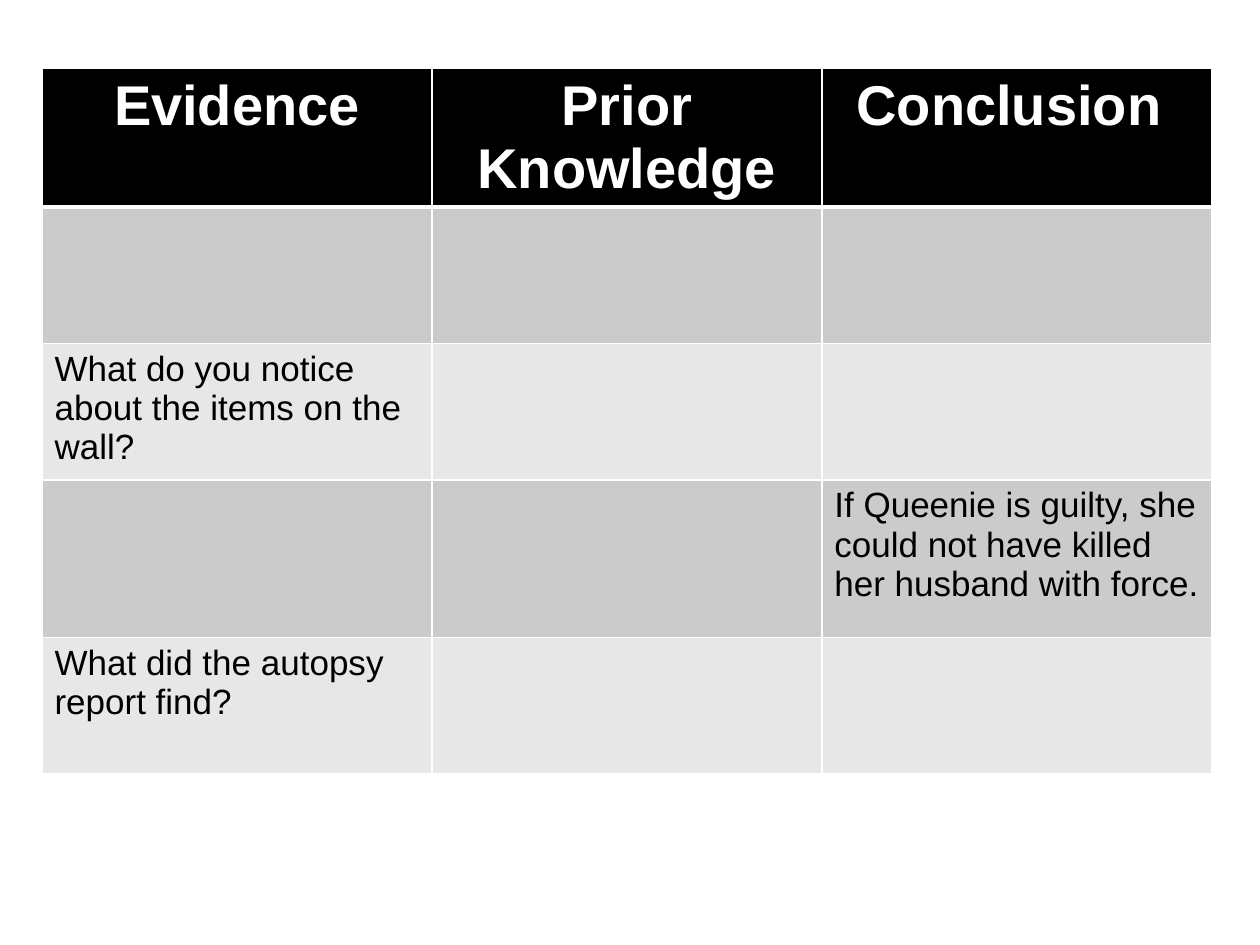
from dataclasses import dataclass

from lxml.etree import SubElement
from pptx import Presentation
from pptx.dml.color import RGBColor
from pptx.enum.text import MSO_ANCHOR as Anchor, PP_ALIGN as Align
from pptx.oxml.ns import qn
from pptx.table import _Cell as Cell
from pptx.util import Cm, Pt


@dataclass(frozen=True)
class Look:
    fill: str
    ink: str
    size: int
    bold: bool
    align: Align


@dataclass(frozen=True)
class Row:
    texts: tuple[str, str, str]
    height: float = 2.75


HEAD = Look("000000", "FFFFFF", 32, True, Align.CENTER)
DARK = Look("CBCBCB", "000000", 20, False, Align.LEFT)
LIGHT = Look("E7E7E7", "000000", 20, False, Align.LEFT)

ROWS = (
    Row(("Evidence", "Prior Knowledge", "Conclusion ")),
    Row(("", "", "")),
    Row(("What do you notice about the items on the wall?", "", "")),
    Row(("", "", "If Queenie is guilty, she could not have killed her husband with force."), 3.18),
    Row(("What did the autopsy report find?", "", "")),
)
WIDTH = 7.86


def color(code: str) -> RGBColor:
    return RGBColor.from_string(code)


def apply(target: object, values: dict) -> None:
    for name, value in values.items():
        setattr(target, name, value)


def border(cell: Cell, widths: dict[str, int]) -> None:
    props = cell._tc.get_or_add_tcPr()
    for side, width in widths.items():
        line = SubElement(props, qn(f"a:ln{side}"), w=str(Pt(width)))
        fill = SubElement(line, qn("a:solidFill"))
        SubElement(fill, qn("a:srgbClr"), val="FFFFFF")


def draw_cell(cell: Cell, text: str, look: Look, widths: dict[str, int]) -> None:
    border(cell, widths)
    cell.fill.solid()
    cell.fill.fore_color.rgb = color(look.fill)
    apply(cell, {
        "text": text,
        "vertical_anchor": Anchor.TOP,
        "margin_left": Cm(0.25),
        "margin_right": Cm(0.25),
        "margin_top": Cm(0.13),
        "margin_bottom": Cm(0.13),
    })
    para = cell.text_frame.paragraphs[0]
    para.alignment = look.align
    for run in para.runs:
        apply(run.font, {"name": "Arial", "size": Pt(look.size), "bold": look.bold})
        run.font.color.rgb = color(look.ink)


def main() -> None:
    deck = Presentation()
    apply(deck, {"slide_width": Cm(25.4), "slide_height": Cm(19.05)})
    slide = deck.slides.add_slide(deck.slide_layouts[6])
    count = len(ROWS[0].texts)
    high = sum(row.height for row in ROWS)
    table = slide.shapes.add_table(
        len(ROWS), count, Cm(0.85), Cm(1.38), Cm(WIDTH * count), Cm(high)
    ).table
    for col in table.columns:
        col.width = Cm(WIDTH)
    for i, row in enumerate(ROWS):
        table.rows[i].height = Cm(row.height)
        look = HEAD if i == 0 else DARK if i % 2 else LIGHT
        widths = {"L": 1, "R": 1, "T": 3 if i == 1 else 1, "B": 3 if i == 0 else 1}
        for j, text in enumerate(row.texts):
            draw_cell(table.cell(i, j), text, look, widths)
    deck.save("out.pptx")


if __name__ == "__main__":
    main()
